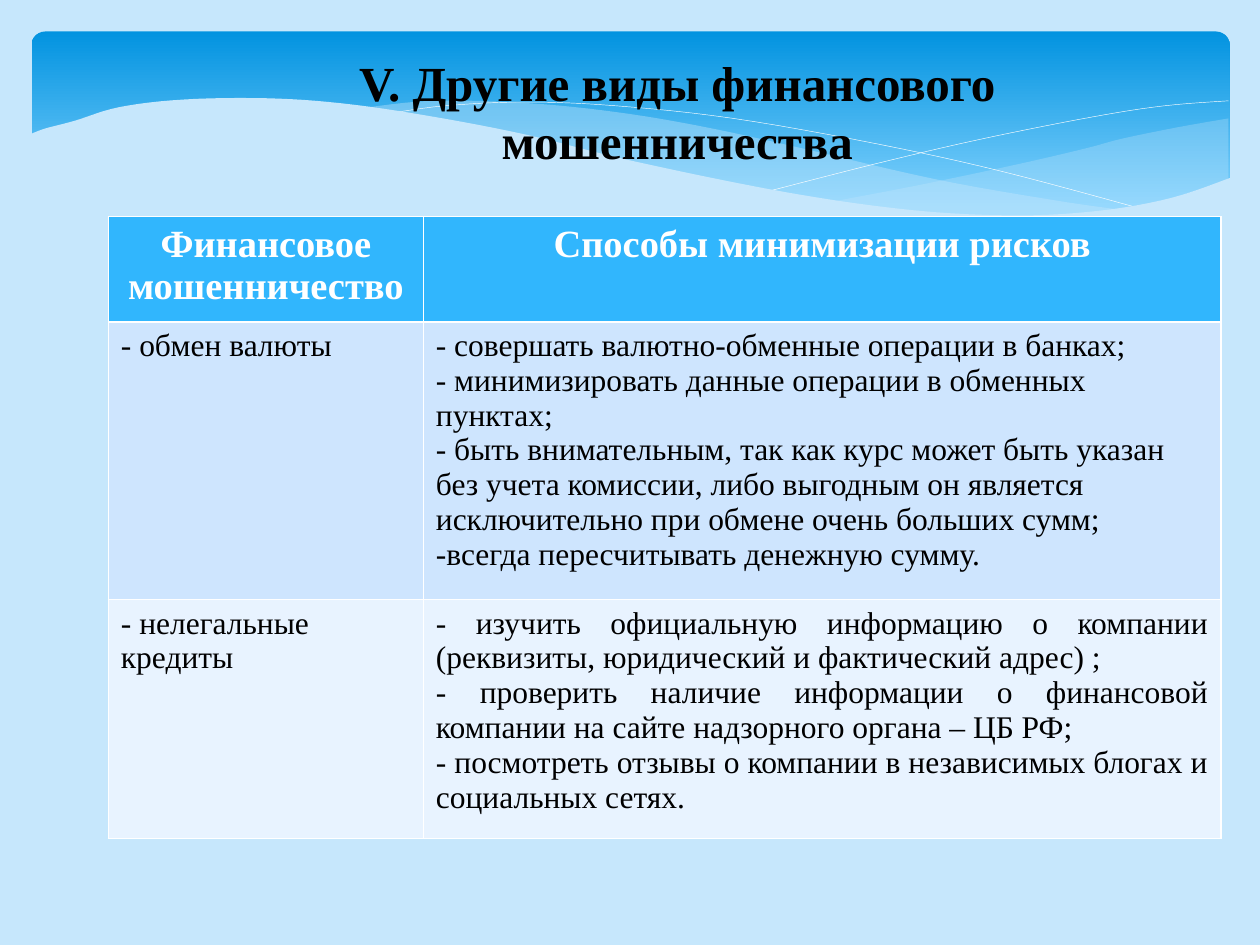
from dataclasses import dataclass

from lxml.etree import SubElement
from pptx import Presentation
from pptx.dml.color import RGBColor as Color
from pptx.enum.shapes import MSO_SHAPE as Preset
from pptx.enum.text import MSO_ANCHOR as Anchor, MSO_AUTO_SIZE as AutoSize, PP_ALIGN as Align
from pptx.oxml.ns import qn
from pptx.util import Inches, Pt


@dataclass(frozen=True)
class Theme:
    font: str = "Times New Roman"
    title: int = 28
    header: int = 22
    body: int = 18
    hairline: float = 0.25
    sky: Color = Color.from_string("C6E7FC")
    deep: Color = Color.from_string("0293E0")
    light: Color = Color.from_string("83D3FE")
    accent: Color = Color.from_string("31B6FD")
    bands: tuple = (Color.from_string("CEE5FE"), Color.from_string("E8F3FF"))
    black: Color = Color.from_string("000000")
    white: Color = Color.from_string("FFFFFF")


def smooth(knots, steps=6):
    points = [knots[0]]
    for i in range(len(knots) - 1):
        a, b, c, d = (knots[max(0, min(k, len(knots) - 1))] for k in range(i - 1, i + 3))
        for t in (step / steps for step in range(1, steps + 1)):
            points.append(tuple(
                (2 * q + (r - p) * t + (2 * p - 5 * q + 4 * r - s) * t**2
                 + (3 * q - p - 3 * r + s) * t**3) / 2
                for p, q, r, s in zip(a, b, c, d)))
    return points


def write(para, text, size, color, bold=False):
    span = para.add_run()
    span.text = text
    span.font.name, span.font.size, span.font.bold = theme.font, Pt(size), bold
    span.font.color.rgb = color


theme = Theme()
deck = Presentation()
deck.slide_width, deck.slide_height = Inches(10), Inches(7.5)
unit = deck.slide_width // 40
page = deck.slides.add_slide(deck.slide_layouts[5])
page.background.fill.solid()
page.background.fill.fore_color.rgb = theme.sky

panel = page.shapes.add_shape(
    Preset.ROUNDED_RECTANGLE, *(int(n * unit) for n in (1, 1, 38.04, 6.24)))
panel.adjustments[0] = 0.07
panel.shadow.inherit = False
panel.line.fill.background()
panel.fill.gradient()
panel.fill.gradient_angle = 270
for stop, color, position in zip(panel.fill.gradient_stops, (theme.deep, theme.light), (0, 0.9)):
    stop.color.rgb, stop.position = color, position

right_wash = smooth([
    (39, 3.76), (37.4, 4.04), (35.64, 4.4), (34.44, 4.72), (32.2, 5.24), (29.16, 5.88), (26.44, 6.4),
]) + smooth([
    (26.44, 6.4), (28.76, 6.68), (30.76, 6.84), (33.4, 6.88), (35.24, 6.76), (37.12, 6.32), (39, 5.68),
])
left_wash = smooth([
    (35.72, 6.68), (33.48, 6.36), (29.64, 5.68), (25.16, 4.64), (22.2, 4), (19.56, 3.56),
    (16.8, 3.28), (13.76, 3.2), (11.44, 3.44),
]) + smooth([
    (11.44, 3.44), (14.48, 3.88), (17.96, 4.64), (22.64, 5.72), (26, 6.32), (29.44, 6.76),
    (32.28, 6.92), (33.92, 6.88), (35.72, 6.68),
])
falling_line = smooth([
    (12.36, 3.6), (14.12, 3.36), (16.64, 3.24), (19.56, 3.36), (23.28, 3.76), (27.8, 4.56),
    (31.8, 5.44), (36.28, 6.64),
])
rising_line = smooth([
    (24.52, 6.04), (27.8, 5.2), (31.04, 4.44), (34.64, 3.72), (36.96, 3.36), (39, 3.2),
])
wave = smooth([
    (39.08, 5.64), (37.2, 6.28), (35, 6.68), (32.36, 6.84), (29.04, 6.68), (25.04, 6.12),
    (20.12, 5.12), (16.72, 4.28), (13.6, 3.68), (10.84, 3.28), (8.44, 3.12), (5.84, 3.16),
    (3.8, 3.4), (2.36, 3.84), (1.44, 4.08), (0.92, 4.28),
]) + [(0.92, 8.96), (39.08, 8.96)]

for outline, opacity in (
    (right_wash, 29), (left_wash, 40), (falling_line, 0), (rising_line, 0), (wave, 100),
):
    points = [(x * unit, y * unit) for x, y in outline]
    builder = page.shapes.build_freeform(*points[0])
    builder.add_line_segments(points[1:], close=opacity > 0)
    curve = builder.convert_to_shape()
    curve.shadow.inherit = False
    if opacity:
        curve.line.fill.background()
        curve.fill.solid()
        curve.fill.fore_color.rgb = theme.sky
        tint = curve.fill._xPr.find(".//" + qn("a:srgbClr"))
        SubElement(tint, qn("a:alpha"), val=str(opacity * 1000))
    else:
        curve.fill.background()
        curve.line.color.rgb = theme.white
        curve.line.width = Pt(theme.hairline)

title = page.shapes.title
page.shapes._spTree.append(title._element)
title.left, title.top, title.width, title.height = (
    int(n * unit) for n in (10.24, 1.44, 22.52, 4.16))
title.text_frame.word_wrap = True
title.text_frame.auto_size = AutoSize.NONE
title.text_frame.vertical_anchor = Anchor.MIDDLE
heading = title.text_frame.paragraphs[0]
heading.alignment = Align.CENTER
write(heading, "V. Другие виды финансового мошенничества", theme.title, theme.black, True)

rows = [
    [(Align.CENTER, False, ["Финансовое мошенничество"]),
     (Align.CENTER, False, ["Способы минимизации рисков"])],
    [(Align.JUSTIFY, False, ["- обмен валюты"]),
     (Align.LEFT, True, [
         " совершать валютно-обменные операции в банках;",
         " минимизировать данные операции в обменных пунктах;",
         " быть внимательным, так как курс может быть указан без учета комиссии, "
         "либо выгодным он является исключительно при обмене очень больших сумм;",
         "всегда пересчитывать денежную сумму."])],
    [(Align.LEFT, False, ["- нелегальные кредиты"]),
     (Align.JUSTIFY, False, [
         "- изучить официальную информацию о компании (реквизиты, юридический и фактический адрес) ;",
         "- проверить наличие информации о финансовой компании на сайте надзорного органа – ЦБ РФ;",
         "- посмотреть отзывы о компании в независимых блогах и социальных сетях."])],
]
widths, heights = (10, 25.32), (3.34, 8.82, 7.58)
table = page.shapes.add_table(
    len(heights), len(widths), int(3.44 * unit), int(6.88 * unit),
    int(sum(widths) * unit), int(sum(heights) * unit)).table
for column, width in zip(table.columns, widths):
    column.width = int(width * unit)
for index, (row, height, contents) in enumerate(zip(table.rows, heights, rows)):
    row.height = int(height * unit)
    is_header = index == 0
    for cell, (alignment, bulleted, lines) in zip(row.cells, contents):
        cell.fill.solid()
        cell.fill.fore_color.rgb = theme.accent if is_header else theme.bands[index - 1]
        for number, line in enumerate(lines):
            para = cell.text_frame.add_paragraph() if number else cell.text_frame.paragraphs[0]
            para.alignment = alignment
            if bulleted:
                settings = para._p.get_or_add_pPr()
                settings.set("marL", "0")
                settings.set("indent", "0")
                SubElement(settings, qn("a:buFont"), typeface=theme.font)
                SubElement(settings, qn("a:buChar"), char="-")
            write(para, line, theme.header if is_header else theme.body,
                  theme.white if is_header else theme.black, is_header)

deck.save("out.pptx")
